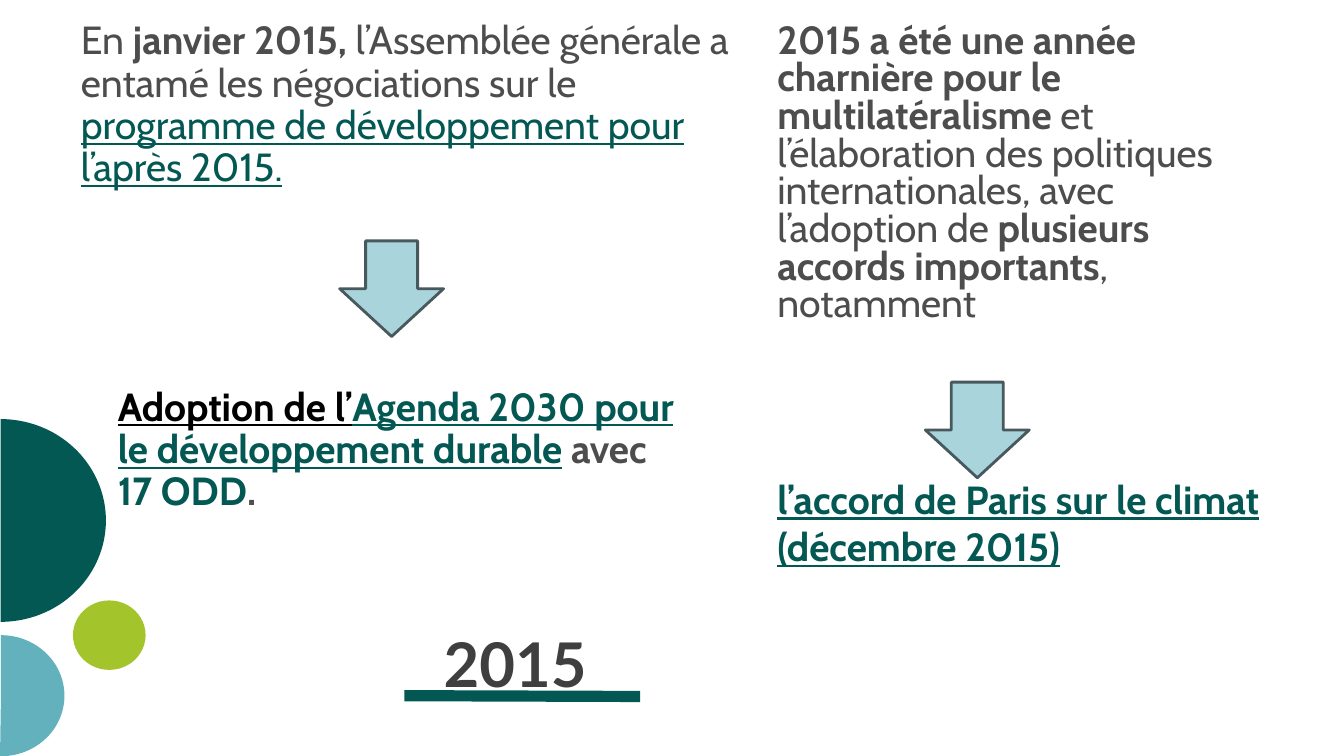
from pptx import Presentation
from pptx.dml.color import RGBColor
from pptx.enum import shapes, text
from pptx.oxml import parse_xml
from pptx.oxml.ns import nsdecls
from pptx.util import Cm, Pt

HUES = {
    "teal": "035854", "blue": "64B1BE", "lime": "A3C42A", "pale": "A9D4DB",
    "edge": "47595C", "gray": "4D4D4D", "dark": "3F3F3F", "black": "000000",
}
KIND = shapes.MSO_SHAPE


def hue(name):
    return RGBColor.from_string(HUES[name])


class Board:
    """Holds the body style and the current slide."""

    face, size, indent = "Cabin", 28, Cm(0.64)

    def __init__(self, slide):
        self.items = slide.shapes

    def shape(self, kind, box, fill, edge=None, turn=0, sweep=None):
        item = self.items.add_shape(kind, *map(Cm, box))
        item.shadow.inherit = False
        item.rotation = turn
        item.fill.solid()
        item.fill.fore_color.rgb = hue(fill)
        if edge:
            item.line.color.rgb = hue(edge)
            item.line.width = Pt(2)
        else:
            item.line.fill.background()
        if sweep:
            item.adjustments[0] = 0
            item.adjustments[1] = sweep

    def line(self, start, end, color, width):
        item = self.items.add_connector(
            shapes.MSO_CONNECTOR.STRAIGHT, *map(Cm, start + end))
        item.line.color.rgb = hue(color)
        item.line.width = Pt(width)
        item._element.spPr.append(
            parse_xml(f"<a:effectLst {nsdecls('a')}/>"))

    def frame(self, box, pads, anchor=text.MSO_ANCHOR.TOP):
        frame = self.items.add_textbox(*map(Cm, box)).text_frame
        frame.word_wrap = True
        frame.vertical_anchor = anchor
        (frame.margin_left, frame.margin_top,
         frame.margin_right, frame.margin_bottom) = map(Cm, pads)
        return frame

    def fill(self, para, runs, spacing, before=0, face=None, size=None, indent=None):
        props = para._p.get_or_add_pPr()
        props.set("marL", str(self.indent if indent is None else indent))
        props.set("indent", "0")
        para.line_spacing = spacing
        para.space_before = Pt(before)
        para.font.name = face or self.face
        para.font.size = Pt(size or self.size)
        for words, color, bold, under in runs:
            run = para.add_run()
            run.text = words
            run.font.color.rgb = hue(color)
            run.font.bold = bold
            run.font.underline = under


def main():
    deck = Presentation()
    deck.slide_width, deck.slide_height = Cm(33.87), Cm(19.05)
    board = Board(deck.slides.add_slide(deck.slide_layouts[6]))

    # Title rule and corner circles
    board.line((10.19, 17.53), (16.13, 17.55), "teal", 8)
    board.shape(KIND.PIE, (-2.54, 10.46, 5.11, 5.31), "teal", turn=270, sweep=107.96)
    board.shape(KIND.PIE, (-1.5, 15.93, 3.05, 3.2), "blue", turn=270, sweep=108.52)
    board.shape(KIND.OVAL, (1.88, 15.09, 1.75, 1.83), "lime", turn=270)

    # Title
    title = board.frame((11.18, 14.96, 6.1, 3.84), (0, 0, 0, 0), text.MSO_ANCHOR.MIDDLE)
    board.fill(title.paragraphs[0], [("2015", "dark", True, False)], 0.8,
               face="Lato", size=44, indent=0)

    # Left column
    talks = board.frame((1.4, -0.23, 17.32, 6.12), (0, 0.76, 0.25, 0.13))
    board.fill(talks.paragraphs[0], [
        ("En ", "gray", False, False),
        ("janvier 2015, ", "gray", True, False),
        ("l’Assemblée générale a entamé les négociations sur le ", "gray", False, False),
        ("programme de développement pour l’après 2015.", "teal", False, True),
    ], 0.9)
    agenda = board.frame((2.08, 9.63, 15.54, 3.48), (0.25, 0.13, 0.25, 0.13))
    board.fill(agenda.paragraphs[0], [
        ("Adoption de l’", "black", True, True),
        ("Agenda 2030 pour le développement durable", "teal", True, True),
        (" avec ", "gray", True, False),
        ("17 ODD", "teal", True, False),
        (".", "gray", True, False),
    ], 0.9)

    # Right column
    pacts = board.frame((18.95, 0.48, 13.51, 15.42), (0, 0.13, 0.25, 0.13))
    board.fill(pacts.paragraphs[0], [
        ("2015 a été une année charnière pour le multilatéralisme ", "gray", True, False),
        ("et l’élaboration des politiques internationales, avec l’adoption de ",
         "gray", False, False),
        ("plusieurs accords importants", "gray", True, False),
        (", notamment", "gray", False, False),
    ], 0.8)
    board.fill(pacts.add_paragraph(), [
        ("l’accord de Paris sur le climat (décembre 2015)", "teal", True, True),
    ], 1.0, before=107)

    # Arrows
    for left, top in ((8.56, 6.07), (23.32, 9.63)):
        board.shape(KIND.DOWN_ARROW, (left, top, 2.62, 2.41), "pale", "edge")

    deck.save("out.pptx")


if __name__ == "__main__":
    main()
